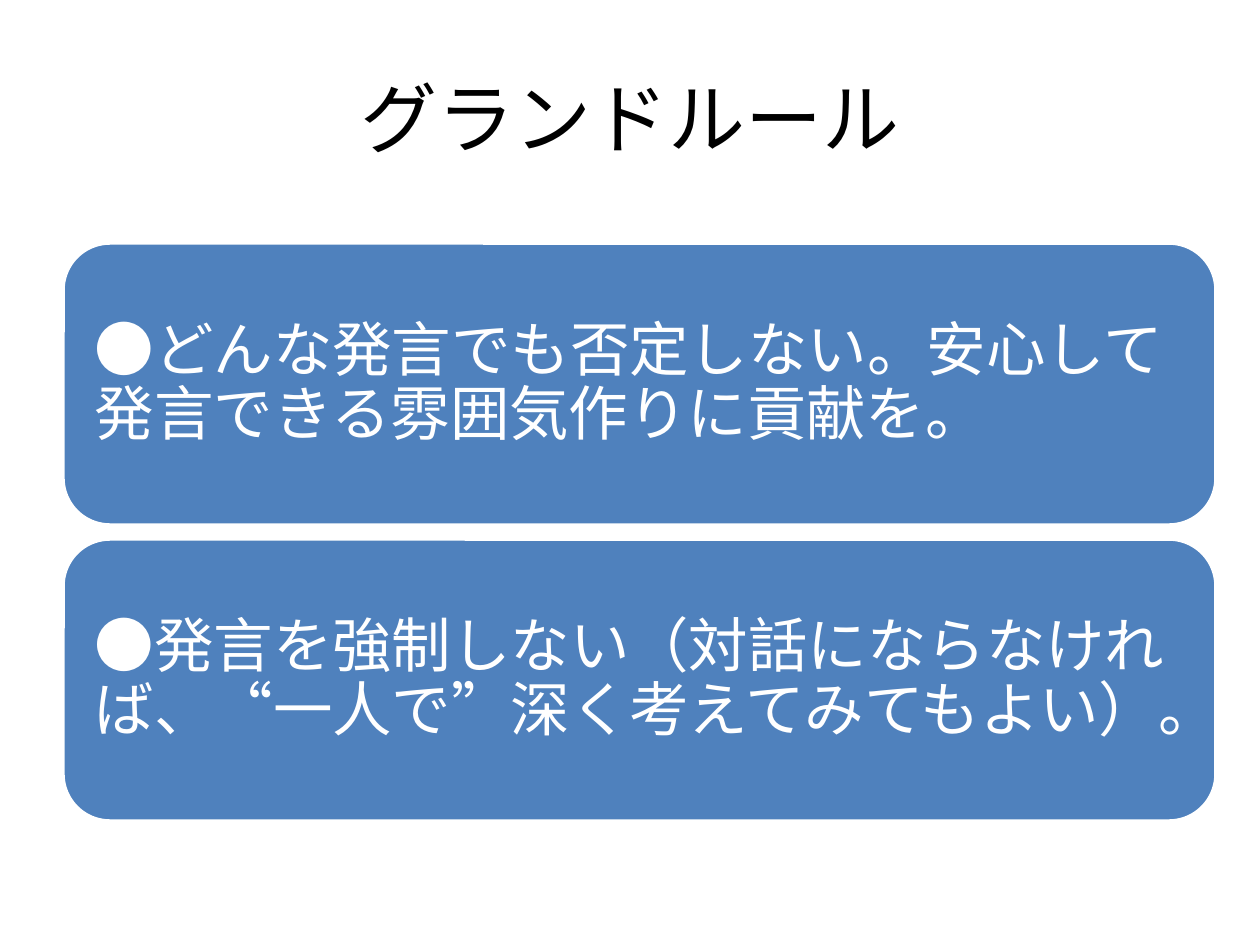
import pptx
import pptx.util
import pptx.dml.color
import pptx.enum.shapes
import pptx.enum.text

PX = 914400 / 126
COLORS = {"ink": "000000", "card": "4F81BD", "paper": "FFFFFF"}
FONT = "Cabin"


def px(n):
    return pptx.util.Emu(round(n * PX))


def rgb(name):
    return pptx.dml.color.RGBColor.from_string(COLORS[name])


def write(frame, text, size, color, align, pad=None, line=None, after=None):
    """Put one formatted paragraph into a text frame."""
    frame.word_wrap = True
    frame.vertical_anchor = pptx.enum.text.MSO_ANCHOR.MIDDLE
    if pad is not None:
        frame.margin_left = frame.margin_right = px(pad)
        frame.margin_top = frame.margin_bottom = px(pad)
    para = frame.paragraphs[0]
    para.alignment = align
    if line is not None:
        para.line_spacing = line
    if after is not None:
        para.space_after = pptx.util.Pt(after)
    run = para.add_run()
    run.text = text
    run.font.name = FONT
    run.font.size = pptx.util.Pt(size)
    run.font.color.rgb = rgb(color)


class Deck:
    def __init__(self, wide, high):
        self.prs = pptx.Presentation()
        self.prs.slide_width = px(wide)
        self.prs.slide_height = px(high)
        self.slide = self.prs.slides.add_slide(self.prs.slide_layouts[5])

    def title(self, text, x, y, w, h):
        shape = self.slide.shapes.title
        shape.left, shape.top, shape.width, shape.height = map(px, (x, y, w, h))
        write(shape.text_frame, text, 44, "ink",
              pptx.enum.text.PP_ALIGN.CENTER)

    def card(self, text, x, y, w, h):
        shape = self.slide.shapes.add_shape(
            pptx.enum.shapes.MSO_SHAPE.ROUNDED_RECTANGLE,
            *map(px, (x, y, w, h)))
        shape.shadow.inherit = False
        shape.fill.solid()
        shape.fill.fore_color.rgb = rgb("card")
        shape.line.color.rgb = rgb("paper")
        shape.line.width = pptx.util.Pt(2)
        write(shape.text_frame, text, 34, "paper",
              pptx.enum.text.PP_ALIGN.LEFT, pad=18, line=0.9, after=12)


def main():
    deck = Deck(1260, 945)

    # Heading
    deck.title("グランドルール", 63, 38, 1134, 158)

    # Rules, stacked with an equal gap
    rules = [
        "●どんな発言でも否定しない。安心して発言できる雰囲気作りに貢献を。",
        "●発言を強制しない（対話にならなければ、“一人で”深く考えてみてもよい）。",
    ]
    top, high, gap = 243, 282, 14
    for i, rule in enumerate(rules):
        deck.card(rule, 63, top + i * (high + gap), 1153, high)

    deck.prs.save("out.pptx")


if __name__ == "__main__":
    main()
